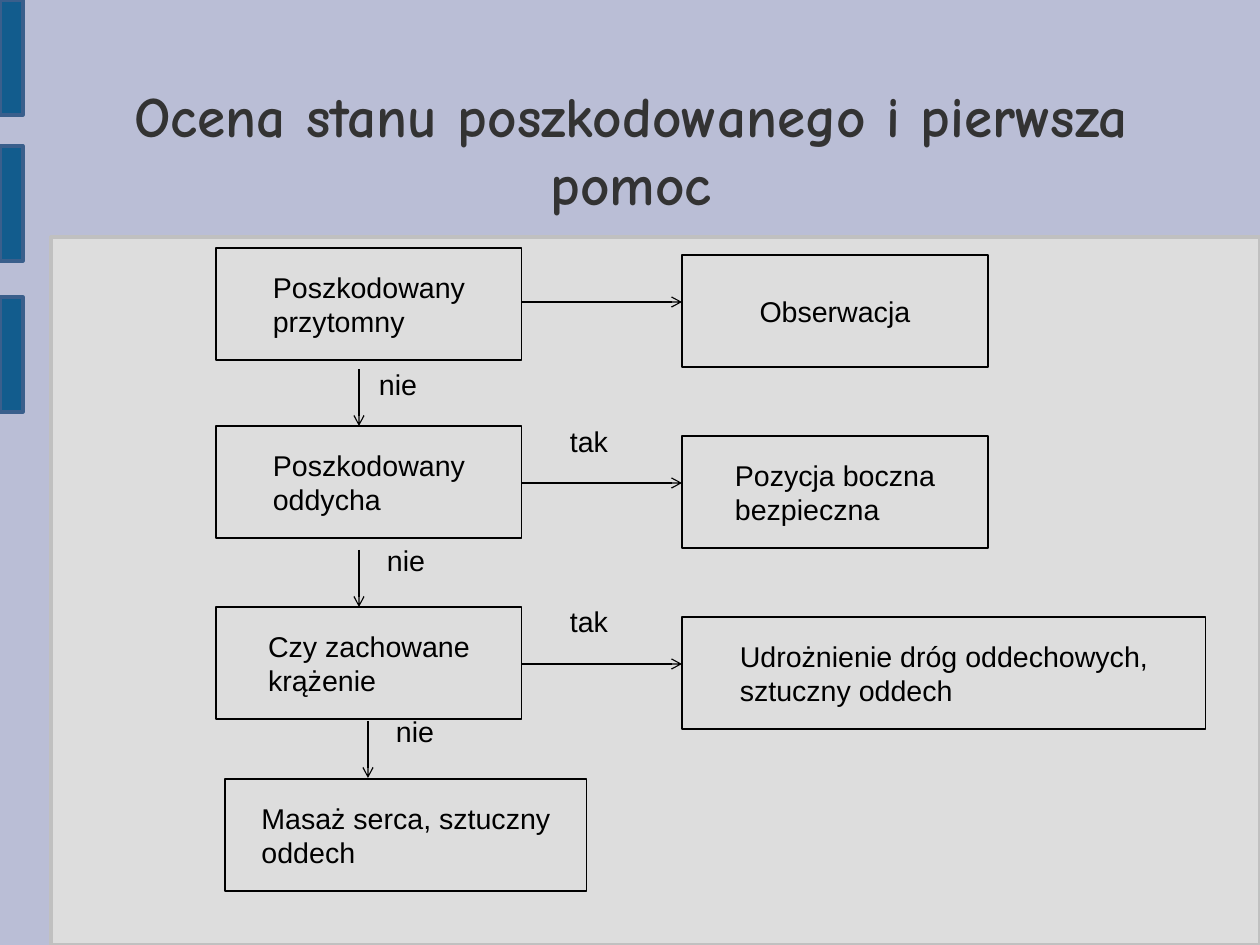
from pptx import Presentation
from pptx.dml.color import RGBColor
from pptx.enum.shapes import MSO_CONNECTOR as CONN, MSO_SHAPE as SHAPE
from pptx.enum.text import MSO_ANCHOR as ANCHOR, PP_ALIGN as ALIGN
from pptx.oxml.ns import qn
from pptx.util import Emu, Pt
from lxml.etree import SubElement

BLACK = "000000"
BOX_W, BOX_H = 306, 112
LEFT_X, RIGHT_X = 216, 682


def px(n):
    return Emu(n * 8000)


def rgb(hex_color):
    return RGBColor.from_string(hex_color)


def write(shape, text, size=18, font="Arial", color=BLACK, bold=False,
          align=ALIGN.LEFT, anchor=ANCHOR.TOP, inset=(11, 6), block_center=False):
    tf = shape.text_frame
    tf.word_wrap = True
    tf.vertical_anchor = anchor
    tf.margin_left = tf.margin_right = px(inset[0])
    tf.margin_top = tf.margin_bottom = px(inset[1])
    if block_center:
        # Centres the text block while its lines stay left-aligned
        tf._txBody.find(qn("a:bodyPr")).set("anchorCtr", "1")
    p = tf.paragraphs[0]
    p.alignment = align
    r = p.add_run()
    r.text = text
    r.font.size = Pt(size)
    r.font.name = font
    r.font.bold = bold
    r.font.color.rgb = rgb(color)


def rect(s, x, y, w, h, fill=None, line=BLACK, line_w=0.75):
    sp = s.shapes.add_shape(SHAPE.RECTANGLE, px(x), px(y), px(w), px(h))
    sp.shadow.inherit = False
    if fill:
        sp.fill.solid()
        sp.fill.fore_color.rgb = rgb(fill)
    else:
        sp.fill.background()
    sp.line.color.rgb = rgb(line)
    sp.line.width = Pt(line_w)
    return sp


def text_box(s, text, x, y, w, h, **fmt):
    write(s.shapes.add_textbox(px(x), px(y), px(w), px(h)), text, **fmt)


def step(s, text, x, y, w=BOX_W):
    write(rect(s, x, y, w, BOX_H), text, anchor=ANCHOR.MIDDLE, block_center=True)


def arrow(s, x1, y1, x2, y2):
    cn = s.shapes.add_connector(CONN.STRAIGHT, px(x1), px(y1), px(x2), px(y2))
    cn.line.color.rgb = rgb(BLACK)
    cn.line.width = Pt(0.75)
    SubElement(cn.line._get_or_add_ln(), qn("a:tailEnd"), type="arrow")
    SubElement(cn._element.spPr, qn("a:effectLst"))


def main():
    prs = Presentation()
    prs.slide_width, prs.slide_height = px(1260), px(945)
    s = prs.slides.add_slide(prs.slide_layouts[6])
    s.background.fill.solid()
    s.background.fill.fore_color.rgb = rgb("BABED6")

    # Panel and side bars
    rect(s, 51, 237, 1209, 708, fill="DDDDDD", line="C0C0C0", line_w=2)
    for y in (0, 146, 297):
        rect(s, 0, y, 23, 115, fill="125C8D", line="3A5F8C", line_w=2)

    # Title
    text_box(s, "Ocena stanu poszkodowanego i pierwsza pomoc", 93, 69, 1076, 159,
             size=36, font="Comic Neue", color="333333", bold=True,
             align=ALIGN.CENTER, anchor=ANCHOR.MIDDLE, inset=(0, 0))

    # Questions with their outcomes
    rows = [
        (248, "Poszkodowany przytomny", 255, "Obserwacja", BOX_W, 302),
        (426, "Poszkodowany oddycha", 436, "Pozycja boczna bezpieczna", BOX_W, 483),
        (607, "Czy zachowane krążenie", 617,
         "Udrożnienie dróg oddechowych, sztuczny oddech", 524, 664),
    ]
    for question_y, question, outcome_y, outcome, outcome_w, arrow_y in rows:
        step(s, question, LEFT_X, question_y)
        step(s, outcome, RIGHT_X, outcome_y, outcome_w)
        arrow(s, LEFT_X + BOX_W, arrow_y, RIGHT_X, arrow_y)

    # Last resort
    step(s, "Masaż serca, sztuczny oddech", 225, 779, 362)

    # Downward arrows
    for x, y in ((359, 369), (359, 550), (368, 721)):
        arrow(s, x, y, x, y + 57)

    # Answer labels
    for text, x, y in (("nie", 368, 361), ("nie", 376, 537), ("nie", 385, 708),
                       ("tak", 559, 418), ("tak", 559, 598)):
        text_box(s, text, x, y, 88, 46)

    prs.save("out.pptx")


if __name__ == "__main__":
    main()
